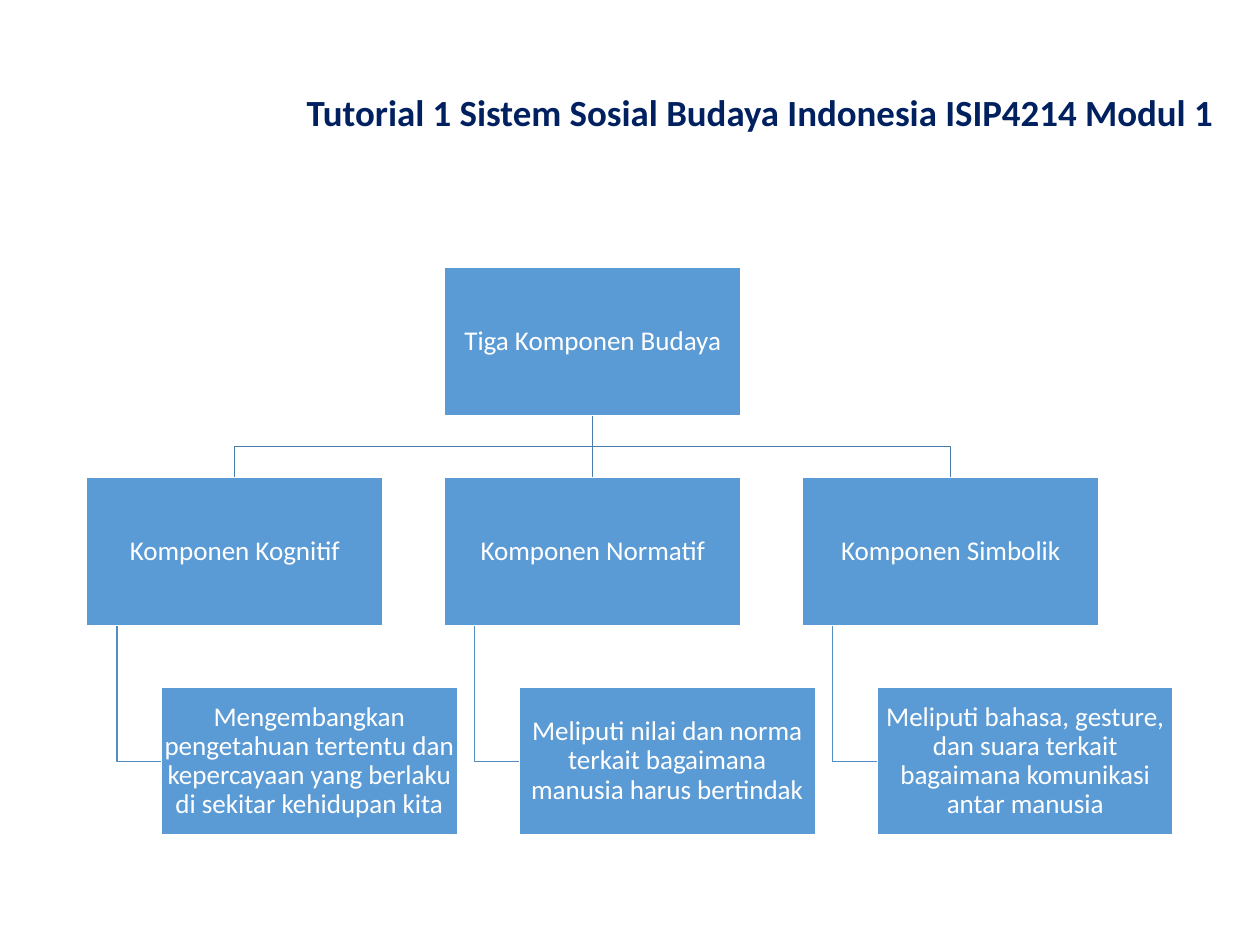
import dataclasses

import lxml.etree
import pptx
import pptx.dml.color
import pptx.enum.shapes
import pptx.enum.text
import pptx.oxml.ns
import pptx.util

EMU_PER_PX = 9144  # 100 px to the inch


@dataclasses.dataclass(frozen=True)
class Theme:
    font: str = "Calibri"
    title_size: int = 30
    box_size: int = 22
    title_color: str = "002060"
    box_fill: str = "5B9BD5"
    white: str = "FFFFFF"
    branch_line: str = "497CAB"
    leaf_line: str = "538DC1"
    line_width: int = 1


THEME = Theme()

TITLE = "Tutorial 1 Sistem Sosial Budaya Indonesia ISIP4214 Modul 1"
ROOT = "Tiga Komponen Budaya"
BRANCHES = [
    ("Komponen Kognitif",
     "Mengembangkan pengetahuan tertentu dan kepercayaan yang berlaku di sekitar kehidupan kita"),
    ("Komponen Normatif",
     "Meliputi nilai dan norma terkait bagaimana manusia harus bertindak"),
    ("Komponen Simbolik",
     "Meliputi bahasa, gesture, dan suara terkait bagaimana komunikasi antar manusia"),
]

# Chart geometry in px
BOX_WIDTH, BOX_HEIGHT = 334, 167
COLUMN_STEP, ROW_STEP = 404, 237
LEAF_INDENT, STEM_INDENT = 84, 34


def px(length):
    return pptx.util.Emu(round(length * EMU_PER_PX))


def rgb(value):
    return pptx.dml.color.RGBColor.from_string(value)


def format_line(shape, color):
    shape.line.color.rgb = rgb(color)
    shape.line.width = pptx.util.Pt(THEME.line_width)


def write_text(text_frame, text, size, color, alignment, bold=False):
    text_frame.word_wrap = True
    text_frame.auto_size = pptx.enum.text.MSO_AUTO_SIZE.NONE
    text_frame.vertical_anchor = pptx.enum.text.MSO_ANCHOR.MIDDLE
    paragraph = text_frame.paragraphs[0]
    paragraph.alignment = alignment
    paragraph.line_spacing = 0.9
    paragraph.space_before = pptx.util.Pt(0)
    run = paragraph.add_run()
    run.text = text
    run.font.name = THEME.font
    run.font.size = pptx.util.Pt(size)
    run.font.bold = bold
    run.font.color.rgb = rgb(color)


def add_box(slide, left, top, text):
    shape = slide.shapes.add_shape(
        pptx.enum.shapes.MSO_SHAPE.RECTANGLE,
        px(left), px(top), px(BOX_WIDTH), px(BOX_HEIGHT))
    shape.shadow.inherit = False
    shape.fill.solid()
    shape.fill.fore_color.rgb = rgb(THEME.box_fill)
    format_line(shape, THEME.white)
    frame = shape.text_frame
    frame.margin_left = frame.margin_right = px(2)
    frame.margin_top = frame.margin_bottom = px(2)
    write_text(frame, text, THEME.box_size, THEME.white,
               pptx.enum.text.PP_ALIGN.CENTER)


def add_path(slide, points, color):
    """Draw a straight connector for two points, else an open bent line."""
    if len(points) == 2:
        (x1, y1), (x2, y2) = points
        shape = slide.shapes.add_connector(
            pptx.enum.shapes.MSO_CONNECTOR.STRAIGHT, px(x1), px(y1), px(x2), px(y2))
        lxml.etree.SubElement(shape._element.spPr, pptx.oxml.ns.qn("a:effectLst"))
    else:
        builder = slide.shapes.build_freeform(*points[0], scale=EMU_PER_PX)
        builder.add_line_segments(points[1:], close=False)
        shape = builder.convert_to_shape()
        shape.shadow.inherit = False
        shape.fill.background()
    format_line(shape, color)


def add_title(slide, left, top, width, height):
    title = slide.shapes.title
    title.left, title.top = px(left), px(top)
    title.width, title.height = px(width), px(height)
    write_text(title.text_frame, TITLE, THEME.title_size, THEME.title_color,
               pptx.enum.text.PP_ALIGN.LEFT, bold=True)


def add_hierarchy(slide, left, top):
    root_left = left + COLUMN_STEP * (len(BRANCHES) - 1) // 2
    root_center = root_left + BOX_WIDTH // 2
    root_bottom = top + BOX_HEIGHT
    branch_top = top + ROW_STEP
    leaf_top = branch_top + ROW_STEP
    bus = (root_bottom + branch_top) / 2
    leaf_middle = leaf_top + BOX_HEIGHT / 2
    columns = [left + index * COLUMN_STEP for index in range(len(BRANCHES))]

    # Lines, behind the boxes
    for column in columns:
        center = column + BOX_WIDTH // 2
        points = [(root_center, root_bottom), (center, branch_top)]
        if center != root_center:
            points[1:1] = [(root_center, bus), (center, bus)]
        add_path(slide, points, THEME.branch_line)
        stem = column + STEM_INDENT
        add_path(slide, [(stem, branch_top + BOX_HEIGHT), (stem, leaf_middle),
                         (column + LEAF_INDENT, leaf_middle)], THEME.leaf_line)

    # Boxes
    add_box(slide, root_left, top, ROOT)
    for column, (branch, leaf) in zip(columns, BRANCHES):
        add_box(slide, column, branch_top, branch)
        add_box(slide, column + LEAF_INDENT, leaf_top, leaf)


def main():
    presentation = pptx.Presentation()
    presentation.slide_width, presentation.slide_height = px(1422), px(1067)
    slide = presentation.slides.add_slide(presentation.slide_layouts.get_by_name("Title Only"))
    add_title(slide, 336, 92, 1125, 75)
    add_hierarchy(slide, 98, 302)
    presentation.save("out.pptx")


if __name__ == "__main__":
    main()
